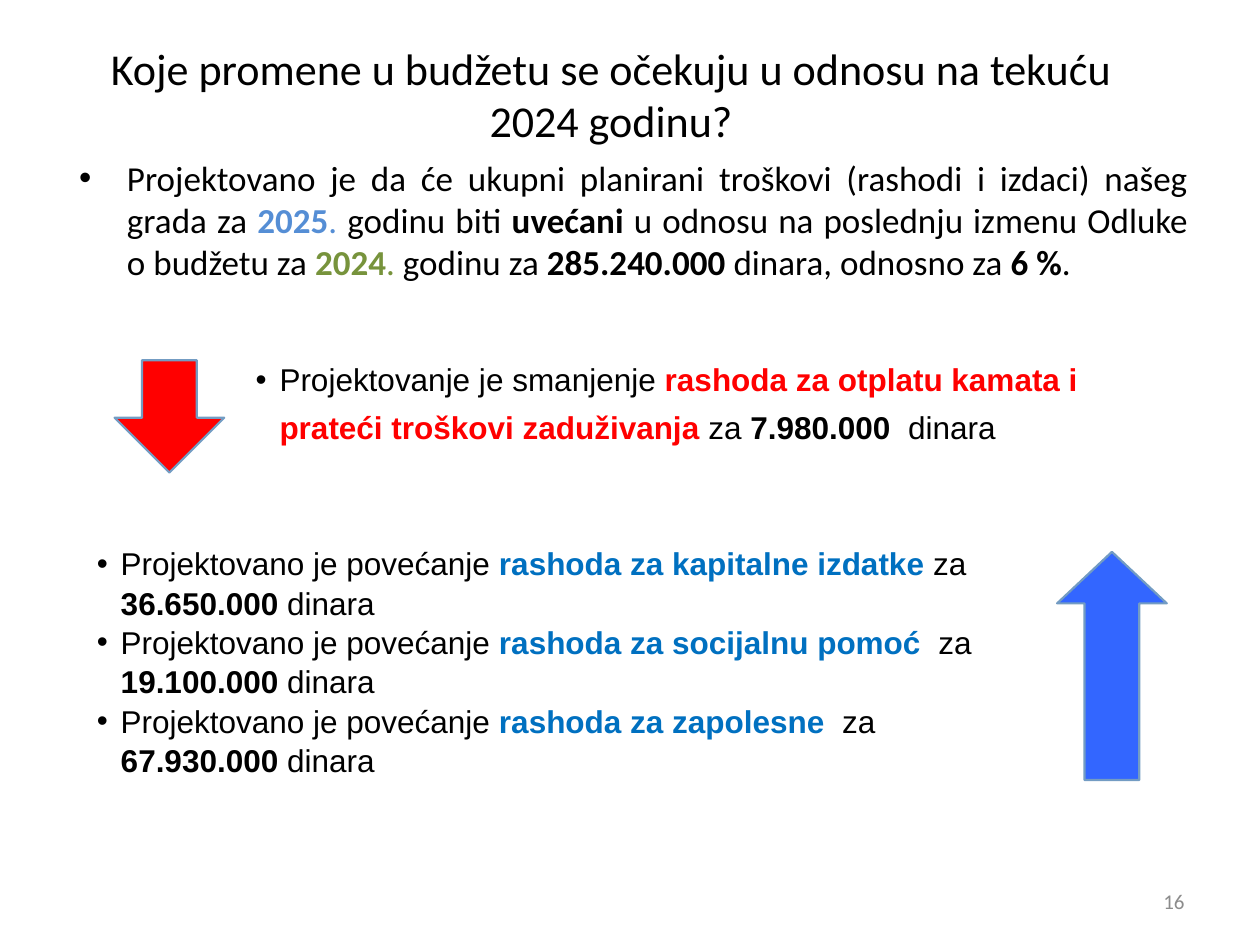
from lxml import etree
from pptx import Presentation
from pptx.dml.color import RGBColor
from pptx.enum.shapes import MSO_SHAPE
from pptx.enum.text import MSO_ANCHOR, MSO_AUTO_SIZE, PP_ALIGN
from pptx.oxml.ns import qn
from pptx.util import Inches, Pt

BLACK, RED, BLUE = "000000", "FF0000", "0070C0"


def color(value):
    return RGBColor.from_string(value)


def write_text(shape, paragraphs, font="Arial", size=18, align=PP_ALIGN.LEFT,
               anchor=MSO_ANCHOR.TOP, indent=None, spacing=None):
    """Fill a shape; each paragraph is a list of (text, color, bold) runs."""
    frame = shape.text_frame
    frame.word_wrap = True
    frame.auto_size = MSO_AUTO_SIZE.NONE
    frame.vertical_anchor = anchor
    for index, runs in enumerate(paragraphs):
        paragraph = frame.add_paragraph() if index else frame.paragraphs[0]
        paragraph.alignment = align
        if spacing:
            paragraph.line_spacing = spacing
        if indent:
            properties = paragraph._p.get_or_add_pPr()
            properties.set("marL", str(Inches(indent)))
            properties.set("indent", str(-Inches(indent)))
            etree.SubElement(properties, qn("a:buFont")).set("typeface", "Arial")
            etree.SubElement(properties, qn("a:buChar")).set("char", "•")
        for text, run_color, bold in runs:
            for line_number, line in enumerate(text.split("\n")):
                if line_number:
                    paragraph.add_line_break()
                run = paragraph.add_run()
                run.text = line
                run.font.name = font
                run.font.size = Pt(size)
                run.font.bold = bold
                run.font.color.rgb = color(run_color)


presentation = Presentation()
presentation.slide_width = Inches(10)
presentation.slide_height = Inches(7.5)
slide = presentation.slides.add_slide(presentation.slide_layouts[5])

# Title
title = slide.shapes.title
title.left, title.top = Inches(0.35), Inches(0.29)
title.width, title.height = Inches(9), Inches(0.91)
write_text(title, [[("Koje promene u budžetu se očekuju u odnosu na tekuću\n2024 godinu?", BLACK, False)]],
           font="Calibri", size=25.2, align=PP_ALIGN.CENTER, anchor=MSO_ANCHOR.MIDDLE)

# Overall change in the budget
summary = slide.shapes.add_textbox(Inches(0.53), Inches(1.19), Inches(9), Inches(1.24))
write_text(summary, [[
    ("Projektovano je da će ukupni planirani troškovi (rashodi i izdaci) našeg grada za ", BLACK, False),
    ("2025", "558ED5", True),
    (". ", "558ED5", False),
    ("godinu biti ", BLACK, False),
    ("uvećani ", BLACK, True),
    ("u odnosu na poslednju izmenu Odluke o budžetu za ", BLACK, False),
    ("2024", "77933C", True),
    (". ", "77933C", False),
    ("godinu za ", BLACK, False),
    ("285.240.000 ", BLACK, True),
    ("dinara, odnosno za ", BLACK, False),
    ("6 %", BLACK, True),
    (".", BLACK, False),
]], font="Calibri", size=20, align=PP_ALIGN.JUSTIFY, indent=0.38)

# Decrease
decrease = slide.shapes.add_textbox(Inches(1.93), Inches(2.73), Inches(7.32), Inches(1.24))
write_text(decrease, [[
    ("Projektovanje je smanjenje ", BLACK, False),
    ("rashoda za otplatu kamata i prateći troškovi zaduživanja ", RED, True),
    ("za ", BLACK, False),
    ("7.980.000", BLACK, True),
    ("  dinara", BLACK, False),
]], indent=0.19, spacing=1.27)

# Increases
increases = [
    ("rashoda za kapitalne izdatke ", "36.650.000"),
    ("rashoda za socijalnu pomoć  ", "19.100.000"),
    ("rashoda za zapolesne  ", "67.930.000"),
]
increase = slide.shapes.add_textbox(Inches(0.67), Inches(4.26), Inches(7.4), Inches(2.2))
write_text(increase, [[
    ("Projektovano je povećanje ", BLACK, False),
    (category, BLUE, True),
    ("za ", BLACK, False),
    (amount, BLACK, True),
    (" dinara", BLACK, False),
] for category, amount in increases], indent=0.19, spacing=1.04)

# Direction arrows
arrows = [
    (MSO_SHAPE.DOWN_ARROW, 0.91, 2.86, 0.89, RED),
    (MSO_SHAPE.UP_ARROW, 8.39, 4.38, 1.81, "3366FF"),
]
for kind, left, top, height, fill in arrows:
    arrow = slide.shapes.add_shape(kind, Inches(left), Inches(top), Inches(0.87), Inches(height))
    arrow.adjustments[0] = 0.5
    arrow.adjustments[1] = 0.5 if kind == MSO_SHAPE.DOWN_ARROW else 0.47
    arrow.shadow.inherit = False
    arrow.fill.solid()
    arrow.fill.fore_color.rgb = color(fill)
    arrow.line.color.rgb = color("739CC3")
    arrow.line.width = Pt(1.25)

# Slide number
number = slide.shapes.add_textbox(Inches(7.17), Inches(6.95), Inches(2.33), Inches(0.4))
write_text(number, [[("16", "8C8C8C", False)]], font="Calibri", size=12,
           align=PP_ALIGN.RIGHT, anchor=MSO_ANCHOR.MIDDLE)

presentation.save("out.pptx")
